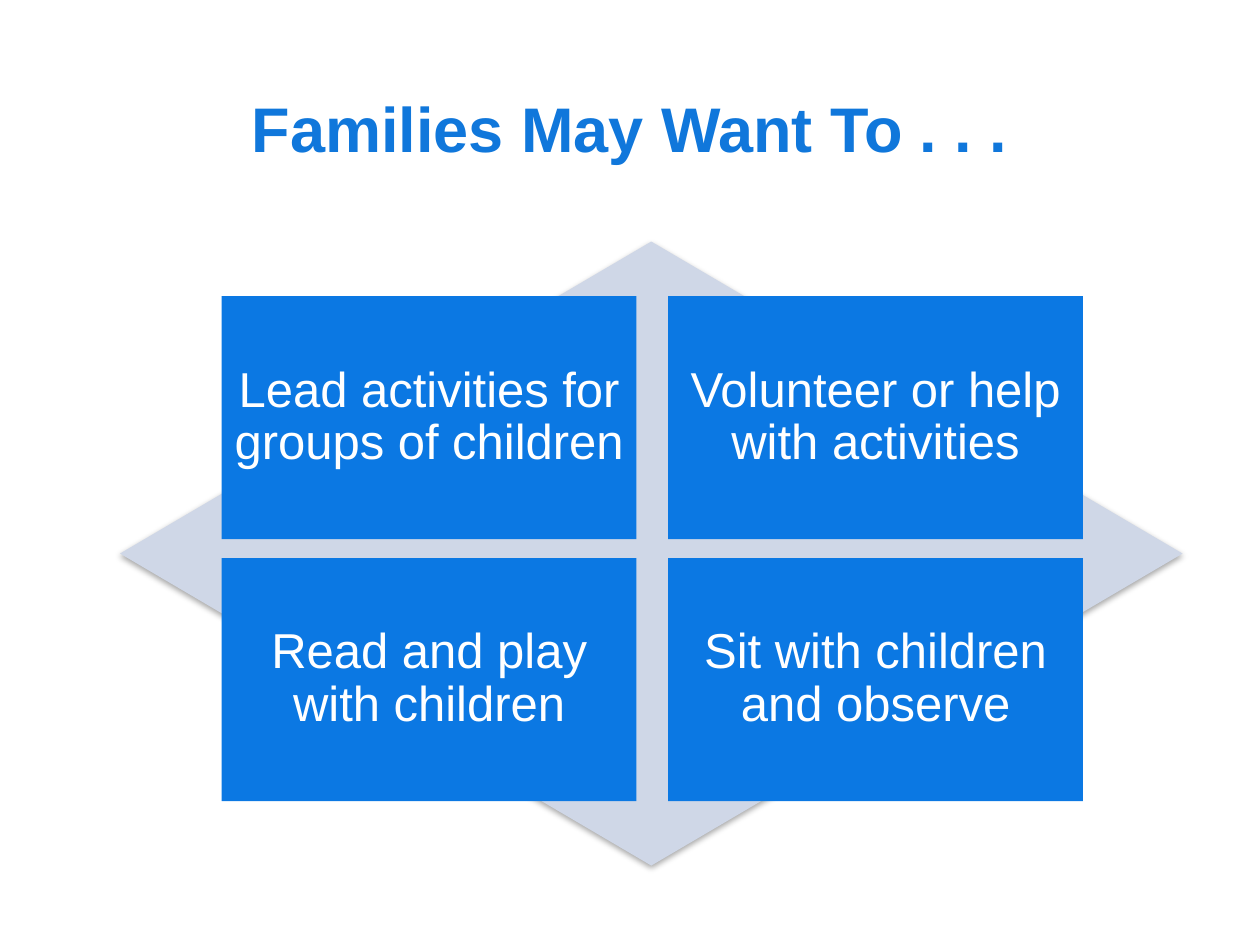
from lxml import etree
from pptx import Presentation, util as u
from pptx.dml.color import RGBColor
from pptx.enum import shapes, text
from pptx.oxml import ns

TITLE_BLUE = RGBColor(0x10, 0x77, 0xDB)
BOX_BLUE = RGBColor(0x0B, 0x78, 0xE3)
PALE = RGBColor(0xCF, 0xD7, 0xE7)
WHITE = RGBColor(0xFF, 0xFF, 0xFF)


def add_run(p, words, size, color, bold=False):
    p.alignment = text.PP_ALIGN.CENTER
    r = p.add_run()
    r.text = words
    r.font.name = "Arial"
    r.font.size = u.Pt(size)
    r.font.bold = bold
    r.font.color.rgb = color


def add_filled(kind, left, top, width, height, color):
    sp = s.shapes.add_shape(kind, u.Cm(left), u.Cm(top), u.Cm(width), u.Cm(height))
    sp.shadow.inherit = False
    sp.fill.solid()
    sp.fill.fore_color.rgb = color
    sp.line.fill.background()
    return sp


prs = Presentation()
prs.slide_width, prs.slide_height = u.Cm(25.4), u.Cm(19.05)
s = prs.slides.add_slide(prs.slide_layouts[5])

title = s.shapes.title
title.left, title.top = u.Cm(0), u.Cm(0.97)
title.width, title.height = u.Cm(25.4), u.Cm(3.18)
title.text_frame.vertical_anchor = text.MSO_ANCHOR.MIDDLE
add_run(title.text_frame.paragraphs[0], "Families May Want To . . .", 36, TITLE_BLUE, True)

diamond = add_filled(shapes.MSO_SHAPE.DIAMOND, 2.42, 4.87, 21.42, 12.58, PALE)
effects = diamond._element.spPr.find(ns.qn("a:effectLst"))
shadow = etree.SubElement(effects, ns.qn("a:outerShdw"), blurRad="40000",
                          dist="23000", dir="5400000", rotWithShape="0")
black = etree.SubElement(shadow, ns.qn("a:srgbClr"), val="000000")
etree.SubElement(black, ns.qn("a:alpha"), val="35000")

activities = [
    "Lead activities for groups of children",
    "Volunteer or help with activities",
    "Read and play with children",
    "Sit with children and observe",
]
for i, words in enumerate(activities):
    row, col = divmod(i, 2)
    sp = add_filled(shapes.MSO_SHAPE.RECTANGLE, 4.47 + col * 9, 5.97 + row * 5.28,
                    8.36, 4.9, BOX_BLUE)
    tf = sp.text_frame
    tf.word_wrap = True
    tf.vertical_anchor = text.MSO_ANCHOR.MIDDLE
    tf.margin_left = tf.margin_right = u.Cm(0.1)
    p = tf.paragraphs[0]
    p.line_spacing = 0.9
    add_run(p, words, 28, WHITE)

prs.save("out.pptx")
